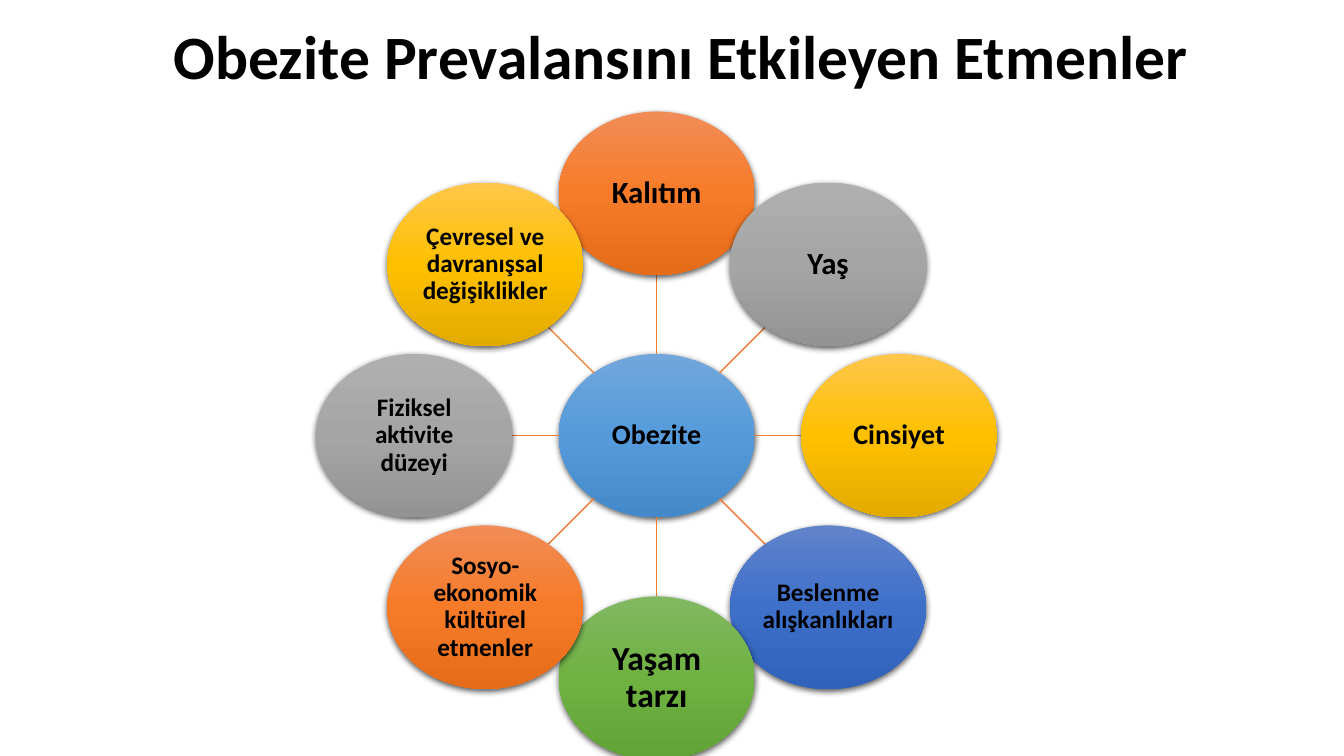
import copy
import math

import lxml.etree
import pptx
import pptx.dml.color
import pptx.enum.shapes
import pptx.enum.text
import pptx.oxml.ns
import pptx.util
from pptx.util import Cm

# Content
TITLE = "Obezite Prevalansını Etkileyen Etmenler "
CENTRE = ("Obezite", 20, "blue")
FACTORS = [  # clockwise from the top: label, text size, gradient
    ("Kalıtım", 22, "orange"),
    ("Yaş", 22, "grey"),
    ("Cinsiyet", 20, "gold"),
    ("Beslenme alışkanlıkları", 18, "navy"),
    ("Yaşam tarzı", 24, "green"),
    ("Sosyo-ekonomik kültürel etmenler", 18, "orange"),
    ("Fiziksel aktivite düzeyi", 18, "grey"),
    ("Çevresel ve davranışsal değişiklikler", 18, "gold"),
]
GRADIENTS = {
    "blue": ("71A6DB", "559BDB", "448ACA"),
    "orange": ("F18C57", "F67B28", "E56C19"),
    "grey": ("AFAFAF", "A5A5A5", "939393"),
    "gold": ("FFC64B", "FFC000", "E3AB00"),
    "navy": ("6183CB", "3E70CA", "3062BB"),
    "green": ("81B861", "6FB242", "62A336"),
}
SPOKE_COLOUR = "ED7D31"

# Layout in centimetres
HUB_X, HUB_Y = 16.55, 10.98
RING_RADIUS = 6.11
OVAL_WIDTH, OVAL_HEIGHT = 4.94, 4.12


def colour(value):
    return pptx.dml.color.RGBColor.from_string(value)


def write_text(shape, text, size, inset=0.03):
    frame = shape.text_frame
    frame.word_wrap = True
    frame.vertical_anchor = pptx.enum.text.MSO_ANCHOR.MIDDLE
    frame.margin_left = frame.margin_right = Cm(inset)
    frame.margin_top = frame.margin_bottom = Cm(inset)
    paragraph = frame.paragraphs[0]
    paragraph.alignment = pptx.enum.text.PP_ALIGN.CENTER
    paragraph.line_spacing = 0.9
    run = paragraph.add_run()
    run.text = text
    run.font.name = "Calibri"
    run.font.size = pptx.util.Pt(size)
    run.font.bold = True
    run.font.color.rgb = colour("000000")


def fill_gradient(shape, colours):
    shape.fill.gradient()
    shape.fill.gradient_angle = 270
    stop_list = shape._element.spPr.find(".//" + pptx.oxml.ns.qn("a:gsLst"))
    stop_list.append(copy.deepcopy(stop_list[-1]))
    for stop, position, value in zip(shape.fill.gradient_stops, (0, 0.5, 1), colours):
        stop.position = position
        stop.color.rgb = colour(value)


def add_shadow(shape):
    shape.shadow.inherit = False
    effects = shape._element.spPr.find(pptx.oxml.ns.qn("a:effectLst"))
    shadow = lxml.etree.SubElement(
        effects, pptx.oxml.ns.qn("a:outerShdw"), blurRad="57150", dist="19050",
        dir="5400000", algn="ctr", rotWithShape="0")
    black = lxml.etree.SubElement(shadow, pptx.oxml.ns.qn("a:srgbClr"), val="000000")
    lxml.etree.SubElement(black, pptx.oxml.ns.qn("a:alpha"), val="63000")


def add_oval(slide, x, y, label, size, gradient):
    oval = slide.shapes.add_shape(
        pptx.enum.shapes.MSO_SHAPE.OVAL,
        Cm(x - OVAL_WIDTH / 2), Cm(y - OVAL_HEIGHT / 2), Cm(OVAL_WIDTH), Cm(OVAL_HEIGHT))
    oval.line.fill.background()
    fill_gradient(oval, GRADIENTS[gradient])
    add_shadow(oval)
    write_text(oval, label, size)


def add_spoke(slide, across, down):
    # Runs from the rim of the hub to the rim of the outer oval
    rim = 1 / math.hypot(across / (OVAL_WIDTH / 2), down / (OVAL_HEIGHT / 2))
    ends = [Cm(hub + distance * step)
            for distance in (rim, RING_RADIUS - rim)
            for hub, step in ((HUB_X, across), (HUB_Y, down))]
    spoke = slide.shapes.add_connector(pptx.enum.shapes.MSO_CONNECTOR.STRAIGHT, *ends)
    spoke.line.color.rgb = colour(SPOKE_COLOUR)
    spoke.line.width = pptx.util.Pt(1)
    lxml.etree.SubElement(spoke._element.spPr, pptx.oxml.ns.qn("a:effectLst"))


def main():
    presentation = pptx.Presentation()
    presentation.slide_width, presentation.slide_height = Cm(33.87), Cm(19.05)
    slide = presentation.slides.add_slide(presentation.slide_layouts[6])

    # Title
    title = slide.shapes.add_textbox(Cm(2.74), Cm(0), Cm(29.21), Cm(3))
    write_text(title, TITLE, 44, inset=0.13)

    # Hub, then each spoke with its factor
    add_oval(slide, HUB_X, HUB_Y, *CENTRE)
    for index, factor in enumerate(FACTORS):
        angle = 2 * math.pi * index / len(FACTORS)
        across, down = math.sin(angle), -math.cos(angle)
        add_spoke(slide, across, down)
        add_oval(slide, HUB_X + RING_RADIUS * across, HUB_Y + RING_RADIUS * down, *factor)

    presentation.save("out.pptx")


if __name__ == "__main__":
    main()
